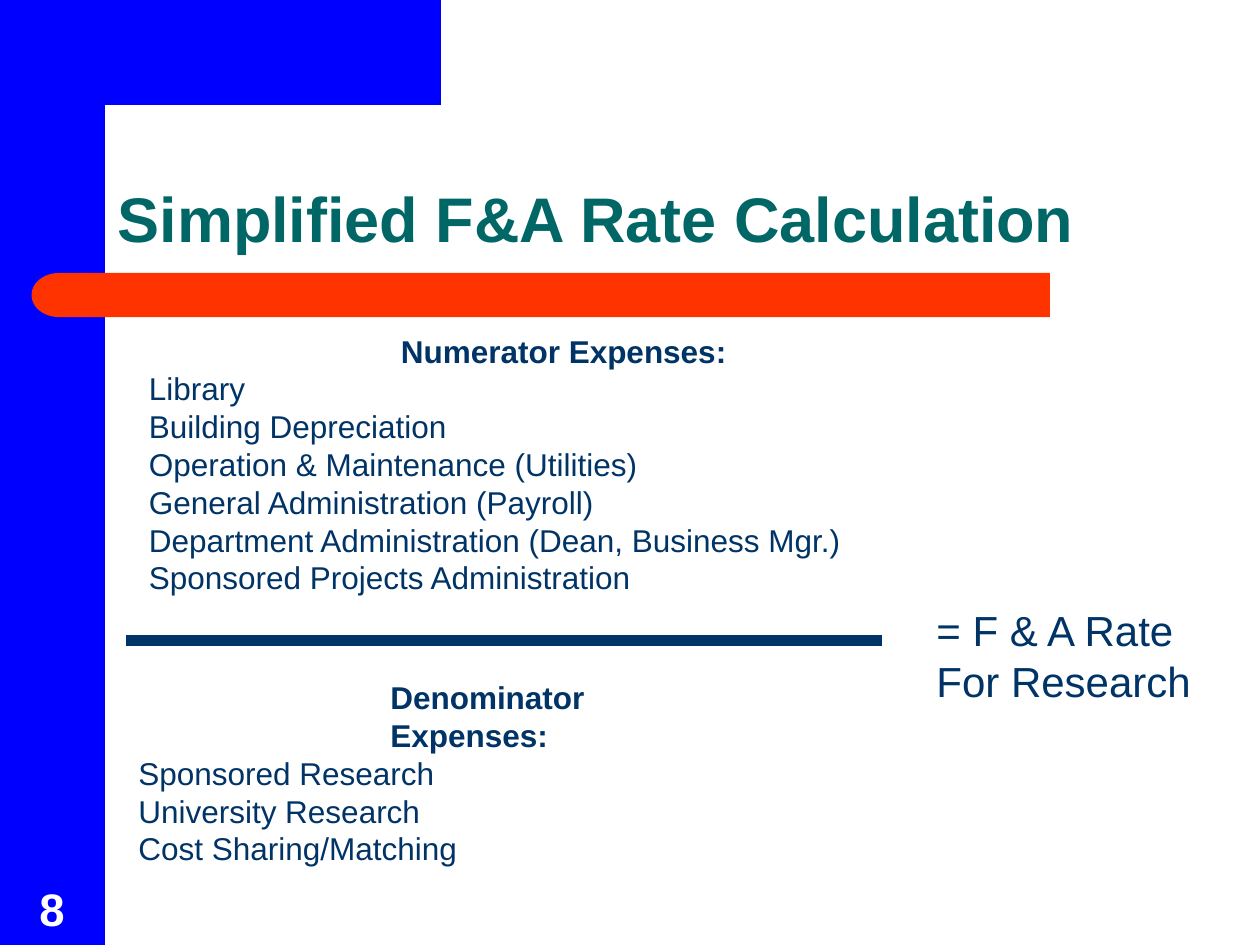
from pptx import Presentation, util as u
from pptx.dml.color import RGBColor
from pptx.enum import shapes, text
from pptx.oxml.ns import qn
from lxml import etree

PX = 7620  # 120 px to the inch
BLUE, RED, NAVY, TEAL, WHITE = "0000FF", "FF3300", "003366", "006666", "FFFFFF"


def paint(color_format, color):
    color_format.rgb = RGBColor.from_string(color)


def add_text(box, lines, size, color, bold=False, wrap=True):
    """Add a text box with one paragraph per line and return its paragraphs."""
    frame = slide.shapes.add_textbox(*[n * PX for n in box]).text_frame
    frame.word_wrap = wrap
    frame.text = "\n".join(lines)
    for paragraph in frame.paragraphs:
        paragraph.font.name = "Arial"
        paragraph.font.size = u.Pt(size)
        paragraph.font.bold = bold
        paint(paragraph.font.color, color)
    return frame.paragraphs


presentation = Presentation()
presentation.slide_width, presentation.slide_height = 1200 * PX, 900 * PX
slide = presentation.slides.add_slide(presentation.slide_layouts[5])

# Blue corner and red bar with a rounded left end
KIND = shapes.MSO_SHAPE
for kind, box, color, rotation in [
    (KIND.RECTANGLE, (0, 0, 100, 900), BLUE, 0),
    (KIND.RECTANGLE, (90, 0, 330, 130), BLUE, 0),
    (KIND.RECTANGLE, (80, 260, 920, 42), RED, 0),
    (KIND.FLOWCHART_DELAY, (30, 260, 52, 42), RED, 180),
]:
    shape = slide.shapes.add_shape(kind, *[n * PX for n in box])
    shape.rotation = rotation
    shape.shadow.inherit = False
    shape.fill.solid()
    paint(shape.fill.fore_color, color)
    shape.line.fill.background()

# Slide number
number, = add_text((11, 833, 77, 63), ["8"], 26, WHITE, bold=True)
number.alignment = text.PP_ALIGN.CENTER

# Title, raised above the blue corner that its white fill overlaps
title = slide.shapes.title
slide.shapes._spTree.append(title._element)
title.left, title.top, title.width, title.height = [n * PX for n in (100, 100, 1070, 150)]
title.fill.solid()
paint(title.fill.fore_color, WHITE)
title.text_frame.text = "Simplified F&A Rate Calculation"
title.text_frame.vertical_anchor = text.MSO_ANCHOR.BOTTOM
title.text_frame.auto_size = text.MSO_AUTO_SIZE.NONE
heading = title.text_frame.paragraphs[0]
heading.alignment = text.PP_ALIGN.LEFT
heading.line_spacing = 0.9
heading.font.name = "Arial"
heading.font.size = u.Pt(36)
heading.font.bold = True
paint(heading.font.color, TEAL)

# Expense lists, each with an indented bold heading
for box, lines in [
    ((130, 310, 690, 264), [
        "Numerator Expenses:",
        "Library",
        "Building Depreciation",
        "Operation & Maintenance (Utilities)",
        "General Administration (Payroll)",
        "Department Administration (Dean, Business Mgr.)",
        "Sponsored Projects Administration",
    ]),
    ((120, 640, 607, 156), [
        "Denominator Expenses:",
        "Sponsored Research",
        "University Research",
        "Cost Sharing/Matching",
    ]),
]:
    list_heading = add_text(box, lines, 18, NAVY)[0]
    list_heading.font.bold = True
    list_heading._p.get_or_add_pPr().set("marL", str(240 * PX))

# Fraction line
fraction_line = slide.shapes.add_connector(
    shapes.MSO_CONNECTOR.STRAIGHT, *[n * PX for n in (120, 610, 840, 610)])
fraction_line.line.width = u.Pt(6)
paint(fraction_line.line.color, NAVY)
etree.SubElement(fraction_line._element.spPr, qn("a:effectLst"))

# Result
add_text((880, 570, 270, 108), ["= F & A Rate", "For Research"], 24, NAVY)

presentation.save("out.pptx")
